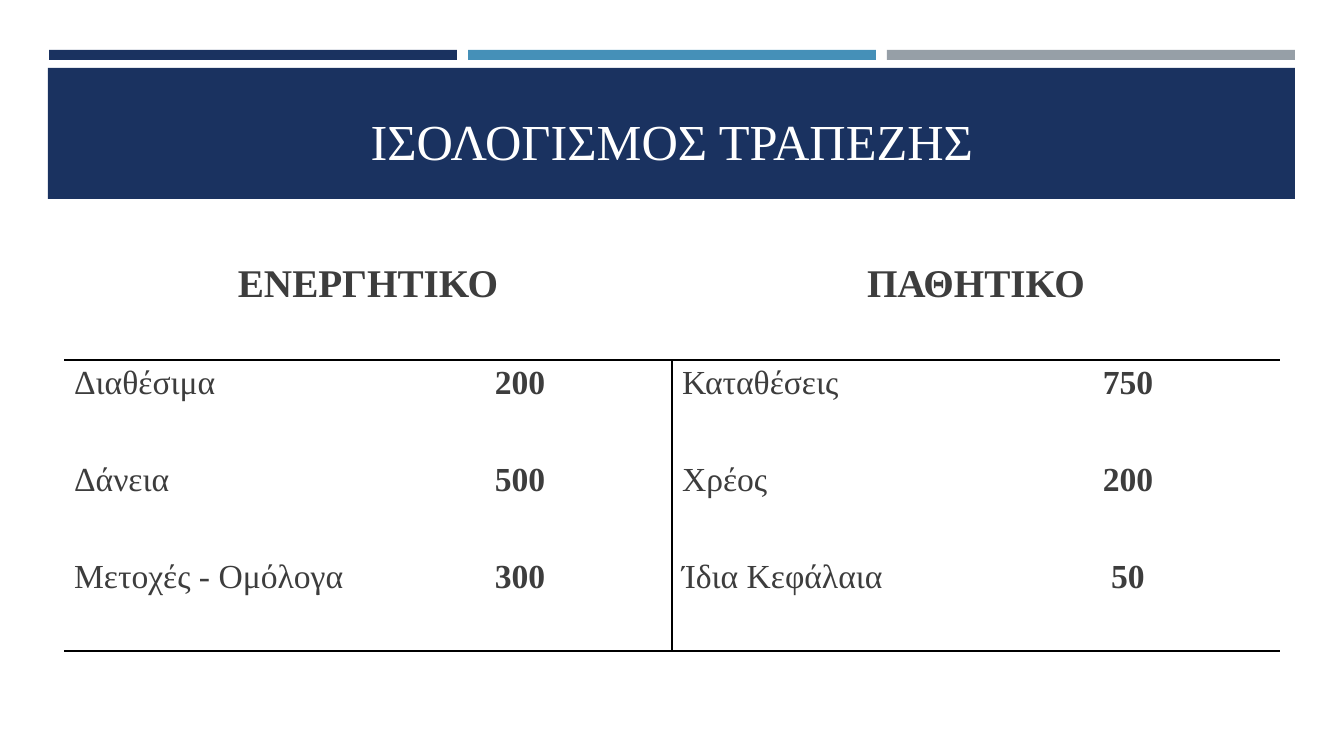
from dataclasses import dataclass

from pptx import Presentation
from pptx.dml.color import RGBColor
from pptx.enum.shapes import MSO_SHAPE
from pptx.enum.text import MSO_ANCHOR, MSO_AUTO_SIZE, PP_ALIGN
from pptx.oxml import parse_xml
from pptx.oxml.ns import nsdecls
from pptx.util import Emu, Pt

EMU_PER_INCH, PX_PER_INCH = 914400, 100.8


@dataclass(frozen=True)
class Theme:
    font: str = "Times New Roman"
    navy: str = "1A3260"
    blue: str = "4590B8"
    grey: str = "969FA7"
    white: str = "FFFFFF"
    ink: str = "3D3D3D"
    rule: str = "000000"
    rule_pt: int = 1
    title_pt: int = 36
    heading_pt: int = 28
    body_pt: int = 24


THEME = Theme()

SIDES = [
    ("ΕΝΕΡΓΗΤΙΚΟ", [("Διαθέσιμα", "200"), ("Δάνεια", "500"), ("Μετοχές - Ομόλογα", "300")]),
    ("ΠΑΘΗΤΙΚΟ", [("Καταθέσεις", "750"), ("Χρέος", "200"), ("Ίδια Κεφάλαια", "50")]),
]


def px(n):
    return Emu(round(n * EMU_PER_INCH / PX_PER_INCH))


def set_text(tf, text, size, color, bold=False, align=PP_ALIGN.LEFT):
    tf.text = text
    p = tf.paragraphs[0]
    p.alignment = align
    font = p.runs[0].font
    font.name, font.size, font.bold = THEME.font, Pt(size), bold
    font.color.rgb = RGBColor.from_string(color)


def add_rect(s, left, top, width, height, color):
    sp = s.shapes.add_shape(MSO_SHAPE.RECTANGLE, px(left), px(top), px(width), px(height))
    sp.shadow.inherit = False
    sp.fill.solid()
    sp.fill.fore_color.rgb = RGBColor.from_string(color)
    sp.line.fill.background()


def set_borders(cell, ruled):
    """Rule the named sides (L, R, T, B) and clear the others."""
    tc_pr = cell._tc.get_or_add_tcPr()
    for i, side in enumerate("LRTB"):
        fill = "<a:noFill/>"
        if side in ruled:
            fill = f'<a:solidFill><a:srgbClr val="{THEME.rule}"/></a:solidFill>'
        width = Pt(THEME.rule_pt)
        tc_pr.insert(i, parse_xml(f'<a:ln{side} {nsdecls("a")} w="{width}">{fill}</a:ln{side}>'))


def add_stripes(s, left, top, width, height, gap=11):
    colors = [THEME.navy, THEME.blue, THEME.grey]
    stripe = (width - gap * (len(colors) - 1)) // len(colors)
    for i, color in enumerate(colors):
        add_rect(s, left + i * (stripe + gap), top, stripe, height, color)


def add_banner(s, left, top, width, height):
    add_rect(s, left, top, width, height, THEME.navy)
    title = s.shapes.title
    # Bring the title in front of the banner
    s.shapes._spTree.append(title._element)
    title.left, title.top = px(left + 16), px(top + 10)
    title.width, title.height = px(width - 31), px(height - 33)
    tf = title.text_frame
    tf.auto_size = MSO_AUTO_SIZE.NONE
    tf.vertical_anchor = MSO_ANCHOR.BOTTOM
    set_text(tf, "ΙΣΟΛΟΓΙΣΜΟΣ ΤΡΑΠΕΖΗΣ", THEME.title_pt, THEME.white, align=PP_ALIGN.CENTER)


def add_balance_sheet(s, left, top, width, height, heading_height=103):
    items = len(SIDES[0][1])
    columns = 2 * len(SIDES)
    frame = s.shapes.add_table(items + 1, columns, px(left), px(top), px(width), px(height))
    table = frame.table
    table.first_row = table.horz_banding = False

    # Column and row sizes
    for column in table.columns:
        column.width = px(width // columns)
    for i, row in enumerate(table.rows):
        row.height = px((height - heading_height) // items if i else heading_height)

    # Rules: under the headings, at the foot and between the two sides
    for r in range(items + 1):
        for c in range(columns):
            cell = table.cell(r, c)
            cell.fill.background()
            ruled = "B" if r in (0, items) else ""
            ruled += "T" if r == 1 else ""
            if r:
                ruled += {1: "R", 2: "L"}.get(c, "")
            set_borders(cell, ruled)

    # Headings and entries
    for i, (heading, entries) in enumerate(SIDES):
        c = 2 * i
        table.cell(0, c).merge(table.cell(0, c + 1))
        set_text(table.cell(0, c).text_frame, heading, THEME.heading_pt, THEME.ink,
                 bold=True, align=PP_ALIGN.CENTER)
        for r, (name, amount) in enumerate(entries, start=1):
            set_text(table.cell(r, c).text_frame, name, THEME.body_pt, THEME.ink)
            set_text(table.cell(r, c + 1).text_frame, amount, THEME.body_pt, THEME.ink,
                     bold=True, align=PP_ALIGN.CENTER)


def main():
    prs = Presentation()
    prs.slide_width, prs.slide_height = px(1344), px(756)
    s = prs.slides.add_slide(prs.slide_layouts[5])
    add_stripes(s, 49, 50, 1246, 10)
    add_banner(s, 48, 68, 1247, 131)
    add_balance_sheet(s, 64, 257, 1216, 394)
    prs.save("out.pptx")


if __name__ == "__main__":
    main()
